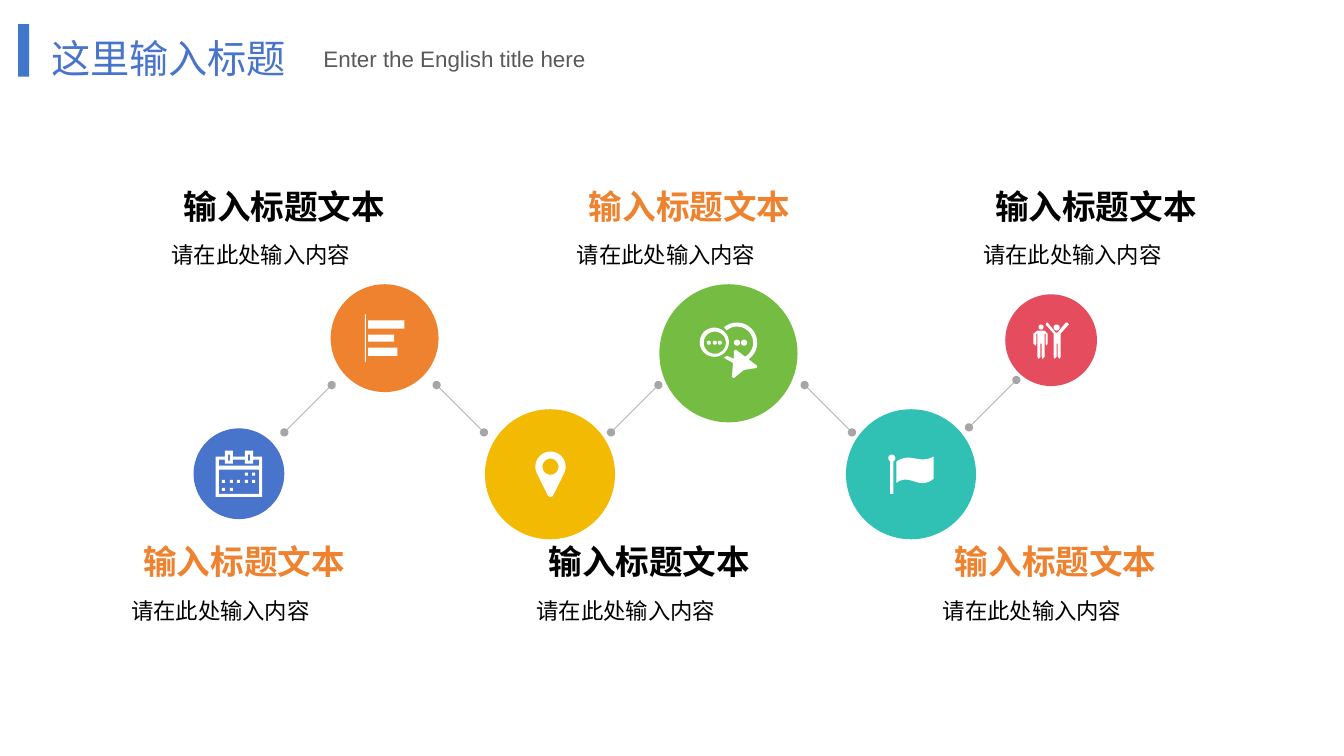
from dataclasses import dataclass
from math import cos, radians, sin

from lxml.etree import SubElement
from pptx import Presentation
from pptx.dml.color import RGBColor
from pptx.enum.shapes import MSO_CONNECTOR, MSO_SHAPE
from pptx.enum.text import MSO_AUTO_SIZE, PP_ALIGN
from pptx.oxml.ns import qn
from pptx.shapes.autoshape import Shape
from pptx.slide import Slide
from pptx.util import Emu, Pt

Point = tuple[float, float]
Contour = list[Point]

EMU_PER_PX = 9144  # 100 px to the inch


@dataclass(frozen=True)
class Theme:
    blue: str = "4874CB"
    orange: str = "EE822F"
    yellow: str = "F2BA02"
    green: str = "75BD42"
    teal: str = "30C0B4"
    red: str = "E54C5E"
    bar: str = "004ABA"
    line: str = "A6A6A6"
    subtitle: str = "595959"
    black: str = "000000"
    white: str = "FFFFFF"
    latin: str = "Arial"
    chinese: str = "Noto Sans CJK SC"
    title_size: int = 28
    heading_size: int = 24
    body_size: int = 16


THEME = Theme()


@dataclass(frozen=True)
class Milestone:
    left: int
    top: int
    diameter: int
    color: str
    icon_left: int
    icon_top: int
    icon: list[Contour]


@dataclass(frozen=True)
class Label:
    text: str
    left: int
    top: int
    width: int
    height: int
    size: int
    color: str
    font: str = THEME.latin
    bold: bool = False
    align: PP_ALIGN = PP_ALIGN.LEFT
    spacing: float = 1.0
    inset_x: int = 10
    inset_y: int = 5
    wrap: bool = True


def px(value: float) -> Emu:
    return Emu(round(value * EMU_PER_PX))


def rect(left: int, top: int, width: int, height: int) -> Contour:
    right, bottom = left + width, top + height
    return [(left, top), (right, top), (right, bottom), (left, bottom)]


def arc(x: float, y: float, radius: float, start: int, end: int) -> Contour:
    """Points from start to end, in degrees clockwise from the right."""
    steps = 32
    angles = [radians(start + (end - start) * i / steps) for i in range(steps + 1)]
    return [(x + radius * cos(a), y + radius * sin(a)) for a in angles]


def disc(left: int, top: int, size: int) -> Contour:
    return arc(left + size / 2, top + size / 2, size / 2, 0, 360)


def curve(a: Point, b: Point, c: Point, d: Point) -> Contour:
    """Points along a cubic Bezier curve."""
    steps = [i / 16 for i in range(17)]
    return [tuple((1 - t) ** 3 * p + 3 * (1 - t) ** 2 * t * q + 3 * (1 - t) * t * t * r + t ** 3 * s
                  for p, q, r, s in zip(a, b, c, d)) for t in steps]


CALENDAR = [
    [(9, 0), (17, 0), (17, 6), (29, 6), (29, 0), (37, 0), (37, 6), (46, 6),
     (46, 46), (0, 46), (0, 6), (9, 6)],
    [(3, 9), (3, 15), (43, 15), (43, 9), (37, 9), (37, 13), (29, 13), (29, 9),
     (17, 9), (17, 13), (9, 13), (9, 9)],
    rect(3, 19, 40, 24), rect(12, 4, 2, 6), rect(32, 4, 2, 6),
    *[rect(x, y, 3, 3) for y, columns in ((22, (29, 36)), (29, (6, 14, 21, 29, 36)), (37, (6, 14)))
      for x in columns],
]
BARS = [rect(0, 0, 1, 47), rect(3, 6, 36, 8), rect(3, 20, 26, 7), rect(3, 33, 29, 8)]
PIN = [arc(15, 15, 15, 155, 385) + arc(15, 42, 3, 25, 155), disc(7, 7, 16)]
FLAG = [
    disc(0, 0, 7), rect(2, 7, 3, 32),
    curve((8, 7), (22, -3), (30, 10), (45, 2)) + curve((45, 24), (30, 36), (22, 18), (8, 28)),
]
CHAT = [
    *[disc(x, 18, 4) for x in (7, 13, 18)], *[disc(x, 17, 6) for x in (34, 41)],
    disc(0, 5, 29), disc(4, 9, 22),
    arc(37, 20, 20, -130, 55)
    + [(57, 43), (57, 45), (44, 47), (34, 55), (32, 54), (33, 40), (24, 35),
       (27, 33), (34, 36), (34, 28), (36, 27)]
    + arc(37, 20, 16, 60, -130),
]
PEOPLE = [
    disc(5, 2, 5), disc(20, 2, 6),
    [(4, 8), (0, 11), (0, 21), (2, 23), (3, 21), (3, 11), (4, 11), (4, 34), (5, 36), (7, 34),
     (7, 21), (8, 21), (8, 34), (9, 36), (11, 34), (11, 11), (12, 11), (12, 21), (13, 23),
     (14, 21), (14, 11), (11, 8)],
    [(13, 0), (14, 0), (22, 10), (24, 10), (32, 0), (34, 0), (35, 2), (27, 11), (27, 34),
     (26, 36), (24, 34), (24, 21), (23, 21), (23, 34), (21, 36), (20, 34), (20, 11), (12, 2)],
]

MILESTONES = [
    Milestone(192, 425, 90, THEME.blue, 214, 447, CALENDAR),
    Milestone(481, 406, 129, THEME.yellow, 531, 448, PIN),
    Milestone(997, 292, 91, THEME.red, 1025, 320, PEOPLE),
    Milestone(654, 282, 137, THEME.green, 694, 320, CHAT),
    Milestone(839, 406, 129, THEME.teal, 881, 451, FLAG),
    Milestone(328, 282, 107, THEME.orange, 362, 312, BARS),
]
LINK_RUN = 47
LINKS = [(282, 429, -1), (606, 429, -1), (961, 424, -1), (798, 382, 1), (433, 382, 1)]
CAPTION_ROWS = [
    (121, 184, (THEME.black, THEME.orange, THEME.black)),
    (81, 537, (THEME.orange, THEME.black, THEME.orange)),
]
TWO_COLUMNS = 805


def paint(shape: Shape, color: str) -> None:
    shape.shadow.inherit = False
    shape.fill.solid()
    shape.fill.fore_color.rgb = RGBColor.from_string(color)
    shape.line.fill.background()


def add_title_bar(slide: Slide) -> None:
    bar = slide.shapes.add_shape(MSO_SHAPE.RECTANGLE, px(18), px(24), px(11), px(52))
    paint(bar, THEME.bar)
    color = bar.fill._xPr.find(qn("a:solidFill"))[0]
    SubElement(color, qn("a:alpha"), val="75000")


def add_milestone(slide: Slide, item: Milestone) -> None:
    size = px(item.diameter)
    circle = slide.shapes.add_shape(MSO_SHAPE.OVAL, px(item.left), px(item.top), size, size)
    paint(circle, item.color)
    outlines = [[(px(item.icon_left + x), px(item.icon_top + y)) for x, y in contour]
                for contour in item.icon]
    builder = slide.shapes.build_freeform(*outlines[0][0])
    for index, outline in enumerate(outlines):
        if index:
            builder.move_to(*outline[0])
        builder.add_line_segments(outline[1:], close=True)
    paint(builder.convert_to_shape(), THEME.white)


def add_link(slide: Slide, x: int, y: int, direction: int) -> None:
    """Draw a diagonal line with a dot at each end; direction 1 goes down."""
    link = slide.shapes.add_connector(MSO_CONNECTOR.STRAIGHT, px(x), px(y),
                                      px(x + LINK_RUN), px(y + direction * LINK_RUN))
    link.line.color.rgb = RGBColor.from_string(THEME.line)
    link.line.width = Pt(0.5)
    for end in ("a:headEnd", "a:tailEnd"):
        SubElement(link.line._get_or_add_ln(), qn(end), type="oval")
    SubElement(link._element.spPr, qn("a:effectLst"))


def add_label(slide: Slide, label: Label) -> None:
    box = slide.shapes.add_textbox(px(label.left), px(label.top), px(label.width), px(label.height))
    frame = box.text_frame
    frame.word_wrap = label.wrap
    frame.auto_size = MSO_AUTO_SIZE.NONE
    frame.margin_left = frame.margin_right = px(label.inset_x)
    frame.margin_top = frame.margin_bottom = px(label.inset_y)
    paragraph = frame.paragraphs[0]
    paragraph.text = label.text
    paragraph.alignment = label.align
    paragraph.line_spacing = label.spacing
    font = paragraph.font
    font.name, font.size, font.bold = label.font, Pt(label.size), label.bold
    font.color.rgb = RGBColor.from_string(label.color)


def add_caption(slide: Slide, left: int, top: int, color: str) -> None:
    add_label(slide, Label("输入标题文本", left, top, 269, 15, THEME.heading_size, color, bold=True,
                           align=PP_ALIGN.RIGHT, inset_x=8, inset_y=0, wrap=False))
    add_label(slide, Label("请在此处输入内容", left + 36, top + 43, 272, 55, THEME.body_size,
                           THEME.black, spacing=1.2, inset_x=13, inset_y=7))


def main() -> None:
    presentation = Presentation()
    presentation.slide_width, presentation.slide_height = px(1333), px(750)
    slide = presentation.slides.add_slide(presentation.slide_layouts[6])
    add_title_bar(slide)
    for milestone in MILESTONES:
        add_milestone(slide, milestone)
    for link in LINKS:
        add_link(slide, *link)
    for left, top, colors in CAPTION_ROWS:
        for column, color in enumerate(colors):
            add_caption(slide, left + column * TWO_COLUMNS // 2, top, color)
    add_label(slide, Label("这里输入标题", 41, -6, 415, 92, THEME.title_size, THEME.blue,
                           font=THEME.chinese, spacing=1.75))
    add_label(slide, Label("Enter the English title here", 311, 40, 549, 37, THEME.body_size,
                           THEME.subtitle))
    presentation.save("out.pptx")


if __name__ == "__main__":
    main()
